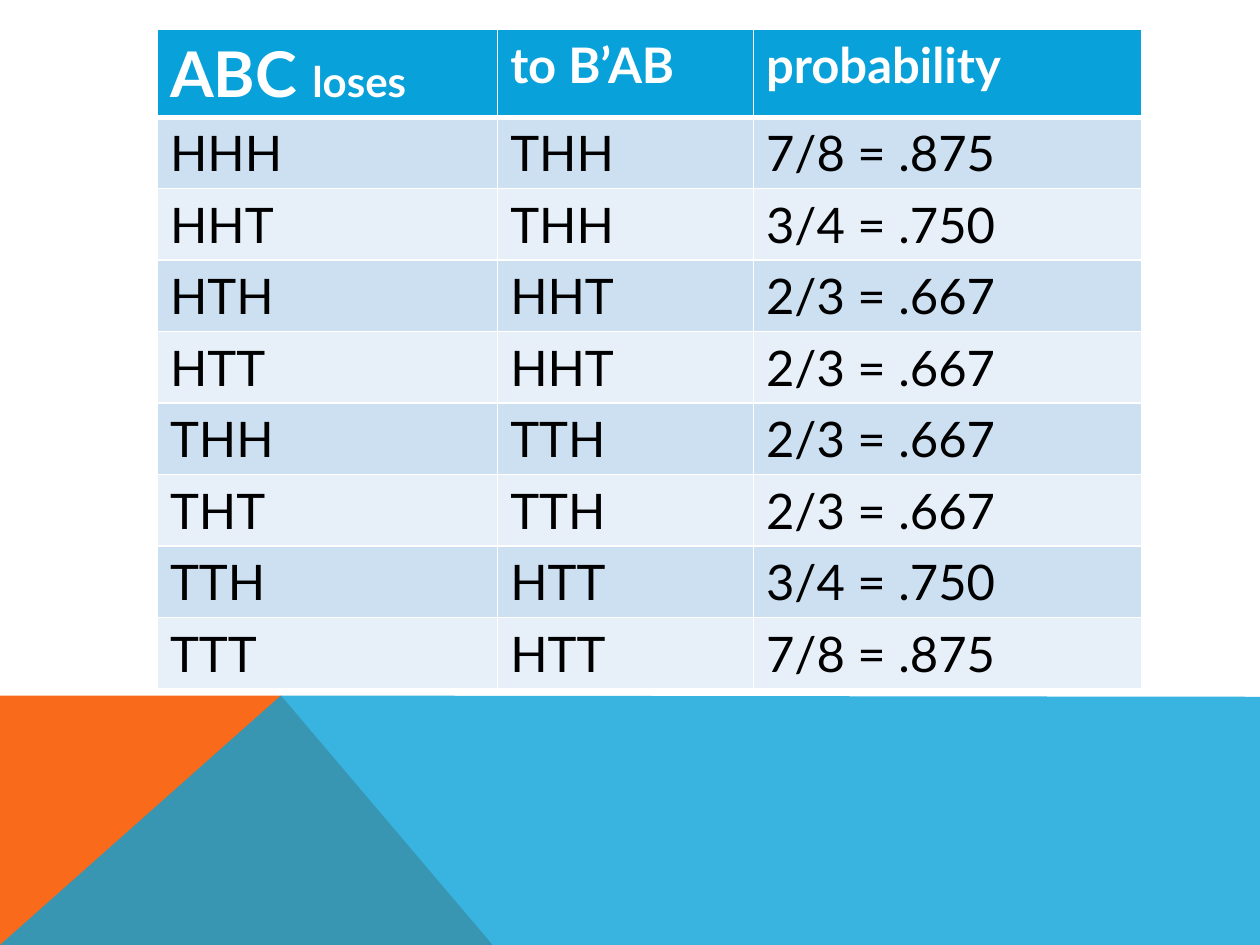
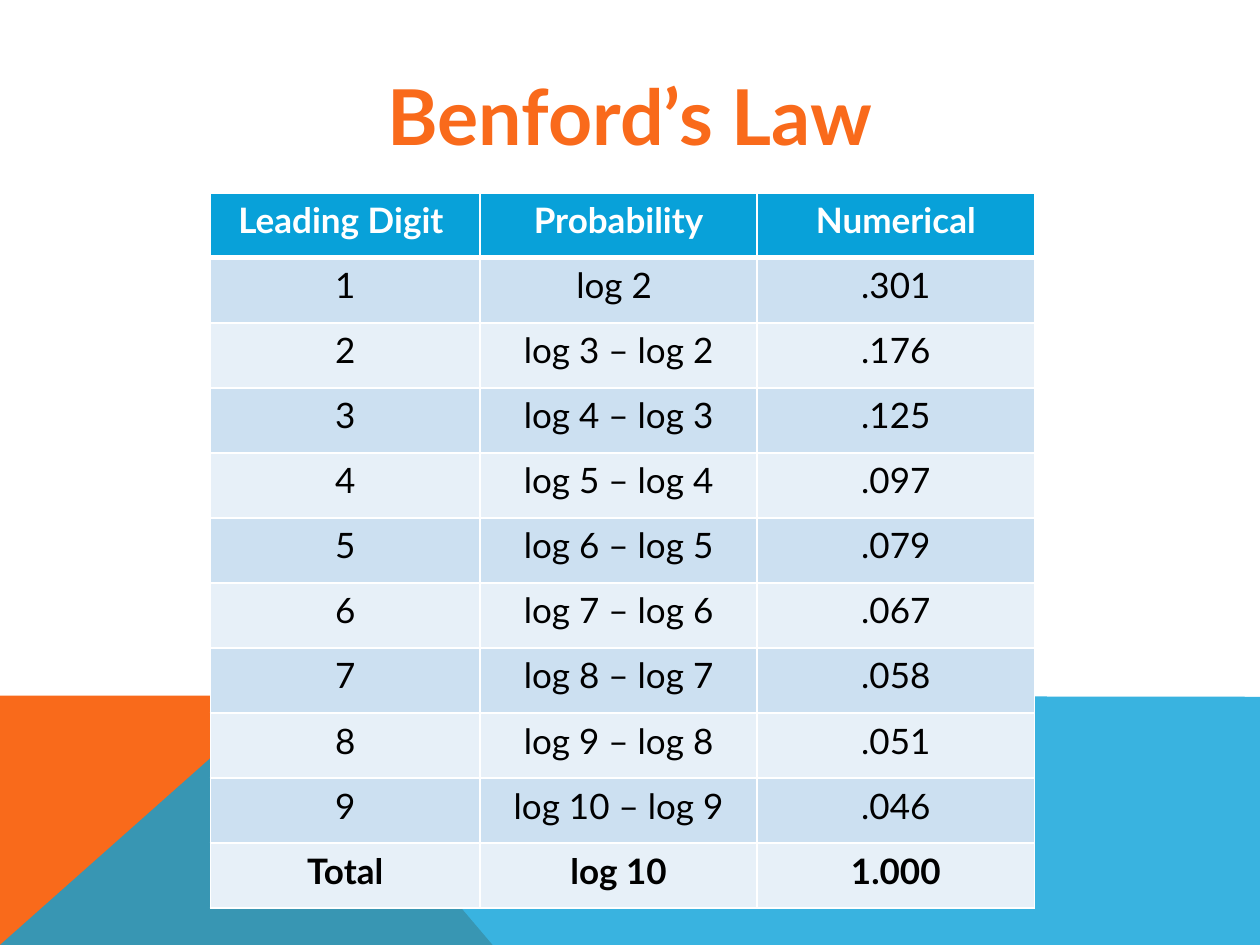
from math import log10

from lxml.etree import SubElement
from pptx import Presentation
from pptx.dml.color import RGBColor
from pptx.enum.text import MSO_ANCHOR, PP_ALIGN
from pptx.oxml.ns import qn
from pptx.util import Inches, Pt

FONT = "Lato"
BLUE, ORANGE, WHITE, BLACK = "08A1D9", "F96A1B", "FFFFFF", "000000"
ROW_FILLS = ["E7F0F8", "CCE0F1"]
BANDS = [
    (ORANGE, None, [(0, 7.5), (0, 5.52), (2.23, 5.52), (3.91, 7.5)]),
    (BLUE, 80, [(0, 7.5), (2.23, 5.52), (10, 5.53), (10, 7.5)]),
]


def paint(fill, color):
    fill.solid()
    fill.fore_color.rgb = RGBColor.from_string(color)


def add_grid(page, rows, left, top, height, widths, size, align, bold_rows):
    frame = page.shapes.add_table(len(rows), len(widths), Inches(left), Inches(top),
                                  Inches(sum(widths)), Inches(height))
    table = frame.table
    for column, width in zip(table.columns, widths):
        column.width = Inches(width)
    for r, row in enumerate(rows):
        for c, text in enumerate(row):
            cell = table.cell(r, c)
            properties = cell._tc.get_or_add_tcPr()
            for side in "LRTB":
                under_header = (r, side) in [(0, "B"), (1, "T")]
                line = SubElement(properties, qn(f"a:ln{side}"), w=str(Pt(3 if under_header else 1)))
                SubElement(SubElement(line, qn("a:solidFill")), qn("a:srgbClr"), val=WHITE)
            paint(cell.fill, ROW_FILLS[r % 2] if r else BLUE)
            para = cell.text_frame.paragraphs[0]
            para.text = text
            para.alignment = align
            para.font.name = FONT
            para.font.size = Pt(size)
            para.font.bold = r in bold_rows
            paint(para.font.fill, BLACK if r else WHITE)
    return table


deck = Presentation()
deck.slide_width, deck.slide_height = Inches(10), Inches(7.5)
title_only, blank = deck.slide_layouts[5], deck.slide_layouts[6]
game_page = deck.slides.add_slide(blank)
benford_page = deck.slides.add_slide(title_only)

# Coloured bands at the foot of every page
for page in deck.slides:
    for color, opacity, corners in BANDS:
        points = [(Inches(x), Inches(y)) for x, y in corners]
        builder = page.shapes.build_freeform(*points[0])
        builder.add_line_segments(points[1:], close=True)
        band = builder.convert_to_shape()
        band.shadow.inherit = False
        band.line.fill.background()
        paint(band.fill, color)
        if opacity:
            tint = band.fill._xPr.find(f"{qn('a:solidFill')}/{qn('a:srgbClr')}")
            SubElement(tint, qn("a:alpha"), val=str(opacity * 1000))

# Coin game: each triple and the one that beats it
game_rows = [
    ("ABC ", "to B’AB", "probability"),
    ("HHH", "THH", "7/8 = .875"),
    ("HHT", "THH", "3/4 = .750"),
    ("HTH", "HHT", "2/3 = .667"),
    ("HTT", "HHT", "2/3 = .667"),
    ("THH", "TTH", "2/3 = .667"),
    ("THT", "TTH", "2/3 = .667"),
    ("TTH", "HTT", "3/4 = .750"),
    ("TTT", "HTT", "7/8 = .875"),
]
game_table = add_grid(game_page, game_rows, 1.25, 0.23, 5.04, [2.7, 2.03, 3.08],
                      28, PP_ALIGN.LEFT, [0])
game_table.rows[0].height = Inches(0.7)
loser_heading = game_table.cell(0, 0).text_frame.paragraphs[0]
loser_heading.runs[0].font.size = Pt(36)
span = loser_heading.add_run()
span.text = "loses"
span.font.size = Pt(24)

# Benford's law
title = benford_page.shapes.title
title.left, title.top, title.width, title.height = Inches(0), Inches(0.49), Inches(10), Inches(0.84)
title.text_frame.text = "Benford’s Law"
title.text_frame.vertical_anchor = MSO_ANCHOR.TOP
heading = title.text_frame.paragraphs[0]
heading.alignment = PP_ALIGN.CENTER
heading.font.name = FONT
heading.font.size = Pt(44)
heading.font.bold = True
paint(heading.font.fill, ORANGE)

benford_rows = [("Leading Digit ", "Probability", "Numerical")]
for digit in range(1, 10):
    formula = f"log {digit + 1} – log {digit}" if digit > 1 else "log 2 "
    share = f"{log10(1 + 1 / digit):.3f}".lstrip("0")
    benford_rows.append((str(digit), formula, share))
benford_rows.append(("Total", "log 10", "1.000"))
add_grid(benford_page, benford_rows, 1.67, 1.53, 5.68, [2.14, 2.2, 2.2],
         20, PP_ALIGN.CENTER, [0, len(benford_rows) - 1])

deck.save("out.pptx")
